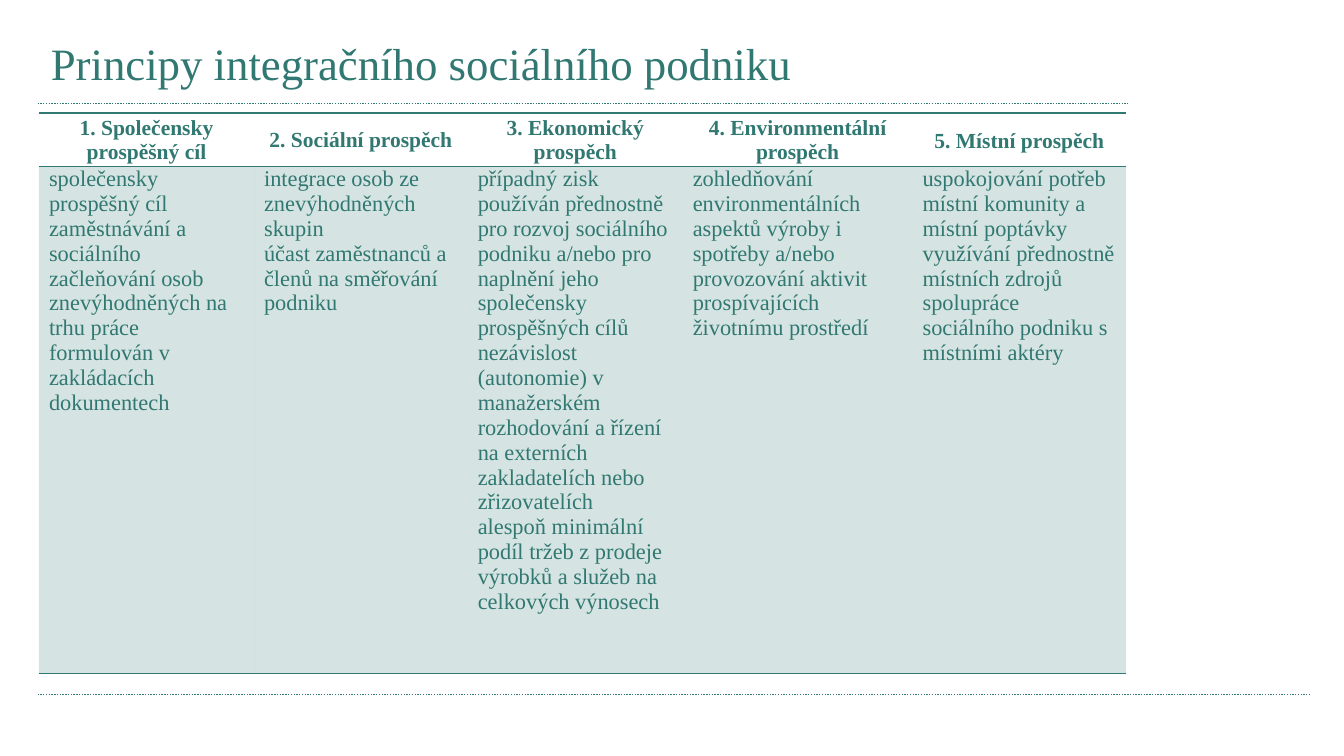
"""Build a slide with a table of the principles of an integration social enterprise."""
import pptx
import pptx.util
import pptx.dml.color
import pptx.enum.dml
import pptx.enum.shapes
import pptx.enum.text
import pptx.oxml
import pptx.oxml.ns

Inches, Pt = pptx.util.Inches, pptx.util.Pt
PP_ALIGN = pptx.enum.text.PP_ALIGN
MSO_ANCHOR = pptx.enum.text.MSO_ANCHOR

TITLE = "Principy integračního sociálního podniku"
PRINCIPLES = [
    ("1. Společensky prospěšný cíl", 1.6, [
        "společensky prospěšný cíl zaměstnávání a sociálního začleňování osob "
        "znevýhodněných na trhu práce formulován v zakládacích dokumentech"]),
    ("2. Sociální prospěch", 1.59, [
        "integrace osob ze znevýhodněných skupin",
        "účast zaměstnanců a členů na směřování podniku"]),
    ("3. Ekonomický prospěch", 1.6, [
        "případný zisk používán přednostně pro rozvoj sociálního podniku a/nebo "
        "pro naplnění jeho společensky prospěšných cílů",
        "nezávislost (autonomie) v manažerském rozhodování a řízení na externích "
        "zakladatelích nebo zřizovatelích",
        "alespoň minimální podíl tržeb z prodeje výrobků a služeb na celkových výnosech"]),
    ("4. Environmentální prospěch", 1.71, [
        "zohledňování environmentálních aspektů výroby i spotřeby a/nebo "
        "provozování aktivit prospívajících životnímu prostředí"]),
    ("5. Místní prospěch", 1.59, [
        "uspokojování potřeb místní komunity a místní poptávky",
        "využívání přednostně místních zdrojů",
        "spolupráce sociálního podniku s místními aktéry"]),
]
SLIDE_WIDTH = 10
RULES = [(0.77, 8.39), (5.17, 9.75)]
ROW_HEIGHTS = [0.4, 3.77]
COLORS = {"teal": "307871"}
FONT = "Times New Roman"
TITLE_FORMAT = {"size": Pt(24), "bold": False}
HEADER_FORMAT = {"size": Pt(11.5), "bold": True}
BODY_FORMAT = {"size": Pt(12), "bold": False}
CELL_FORMAT = {"margin_left": Pt(5.4), "margin_right": Pt(5.4),
               "margin_top": 0, "margin_bottom": 0}
PLAIN_TABLE = "{2D5ABB26-0587-4C30-8999-92F81FD0307C}"
TEAL = pptx.dml.color.RGBColor.from_string(COLORS["teal"])


def apply(target, values):
    for name, value in values.items():
        setattr(target, name, value)


def write(tf, texts, font, align=PP_ALIGN.LEFT):
    tf.word_wrap = True
    for i, text in enumerate(texts):
        p = tf.add_paragraph() if i else tf.paragraphs[0]
        p.alignment = align
        r = p.add_run()
        r.text = text
        apply(r.font, {"name": FONT, **font})
        r.font.color.rgb = TEAL


def add_rule(slide, y, right):
    line = slide.shapes.add_connector(
        pptx.enum.shapes.MSO_CONNECTOR.STRAIGHT, Inches(0.28), Inches(y), Inches(right), Inches(y))
    line.line.color.rgb = TEAL
    apply(line.line, {"width": Pt(0.75),
                      "dash_style": pptx.enum.dml.MSO_LINE.ROUND_DOT})
    line._element.spPr.append(pptx.oxml.parse_xml(
        f'<a:effectLst {pptx.oxml.ns.nsdecls("a")}/>'))


def add_borders(cell, sides):
    for i, side in enumerate(sides):
        cell._tc.get_or_add_tcPr().insert(i, pptx.oxml.parse_xml(
            f'<a:ln{side} {pptx.oxml.ns.nsdecls("a")} w="{Pt(1)}"><a:solidFill>'
            f'<a:srgbClr val="{COLORS["teal"]}"/></a:solidFill></a:ln{side}>'))


def tint(cell, percent):
    cell.fill.solid()
    cell.fill.fore_color.rgb = TEAL
    color = cell._tc.tcPr.find(".//" + pptx.oxml.ns.qn("a:srgbClr"))
    color.append(pptx.oxml.parse_xml(
        f'<a:alpha {pptx.oxml.ns.nsdecls("a")} val="{percent * 1000}"/>'))


def add_principles(slide):
    width = sum(w for _, w, _ in PRINCIPLES)
    frame = slide.shapes.add_table(
        len(ROW_HEIGHTS), len(PRINCIPLES), Inches(0.29), Inches(0.84),
        Inches(width), Inches(sum(ROW_HEIGHTS)))
    table = frame.table
    table.horz_banding = False
    table._tbl.tblPr.find(pptx.oxml.ns.qn("a:tableStyleId")).text = PLAIN_TABLE
    for row, height in zip(table.rows, ROW_HEIGHTS):
        row.height = Inches(height)
    for col, (heading, col_width, points) in enumerate(PRINCIPLES):
        table.columns[col].width = Inches(col_width)
        head, body = table.cell(0, col), table.cell(1, col)
        apply(head, {**CELL_FORMAT, "vertical_anchor": MSO_ANCHOR.MIDDLE})
        apply(body, {**CELL_FORMAT, "vertical_anchor": MSO_ANCHOR.TOP})
        write(head.text_frame, [heading], HEADER_FORMAT, PP_ALIGN.CENTER)
        write(body.text_frame, points, BODY_FORMAT)
        head.fill.background()
        tint(body, 20)
        add_borders(head, "TB")
        add_borders(body, "TB")
    apply(head.text_frame.paragraphs[0], {"line_spacing": 1.15, "space_after": Pt(10)})


def main():
    prs = pptx.Presentation()
    apply(prs, {"slide_width": Inches(SLIDE_WIDTH),
                "slide_height": Inches(SLIDE_WIDTH * 9 / 16)})
    slide = prs.slides.add_slide(prs.slide_layouts[6])
    for y, right in RULES:
        add_rule(slide, y, right)
    title = slide.shapes.add_textbox(Inches(0.28), Inches(0.21), Inches(6.3), Inches(0.56))
    title.text_frame.vertical_anchor = MSO_ANCHOR.MIDDLE
    write(title.text_frame, [TITLE], TITLE_FORMAT)
    title.text_frame.paragraphs[0].line_spacing = 0.9
    add_principles(slide)
    prs.save("out.pptx")


if __name__ == "__main__":
    main()
